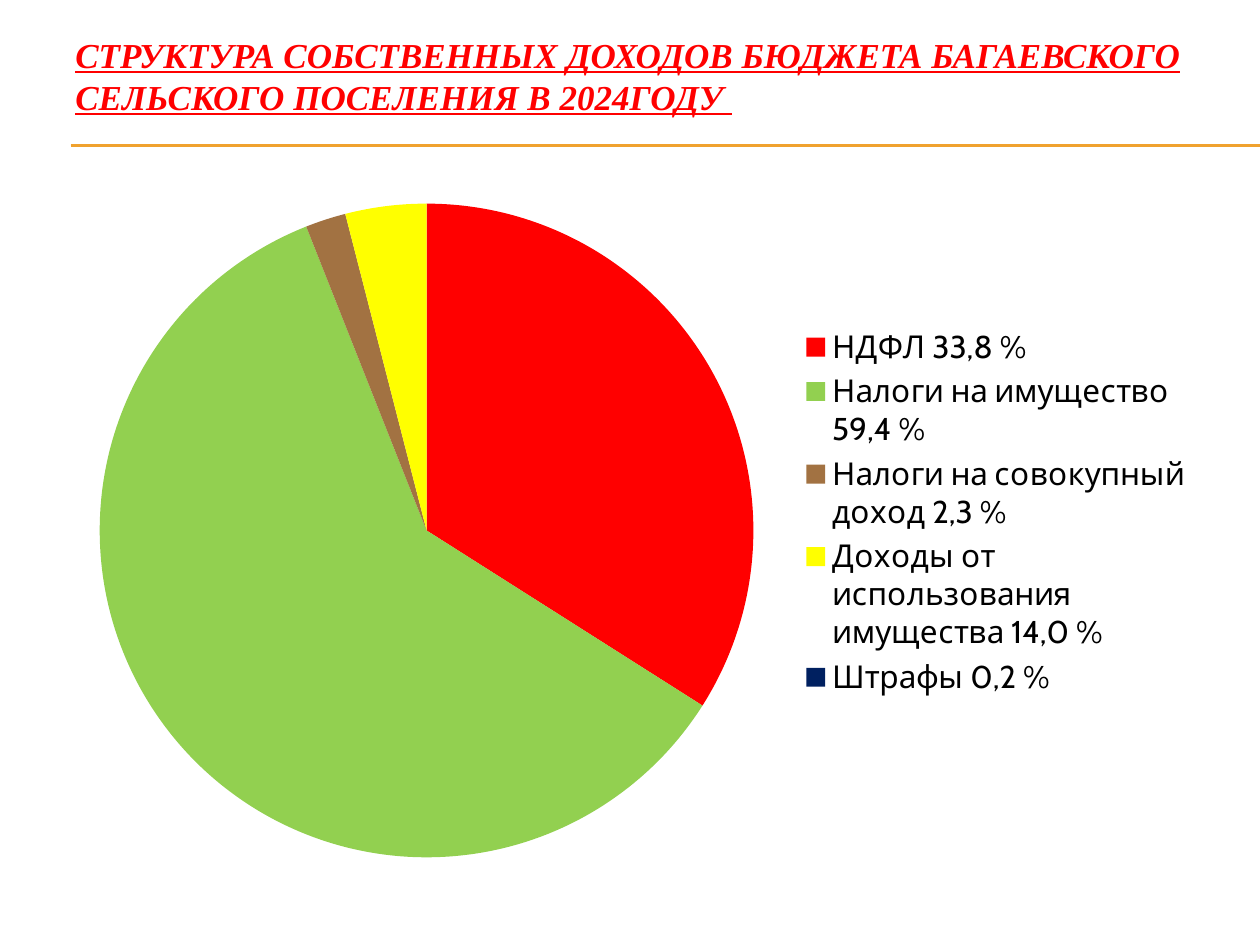
from lxml import etree
from pptx import Presentation
from pptx.chart.data import CategoryChartData
from pptx.dml.color import RGBColor
from pptx.enum.chart import XL_CHART_TYPE, XL_LEGEND_POSITION
from pptx.enum.shapes import MSO_CONNECTOR
from pptx.enum.text import MSO_ANCHOR
from pptx.oxml import parse_xml
from pptx.oxml.ns import nsdecls, qn
from pptx.util import Inches, Pt

PIE = XL_CHART_TYPE.PIE
LEGEND_RIGHT = XL_LEGEND_POSITION.RIGHT
STRAIGHT = MSO_CONNECTOR.STRAIGHT
MIDDLE = MSO_ANCHOR.MIDDLE

RED = RGBColor(0xFF, 0x00, 0x00)
GREEN = RGBColor(0x92, 0xD0, 0x50)
BROWN = RGBColor(0xA2, 0x72, 0x42)
YELLOW = RGBColor(0xFF, 0xFF, 0x00)
NAVY = RGBColor(0x00, 0x20, 0x60)
ORANGE = RGBColor(0xF0, 0xA2, 0x2E)
BLACK = RGBColor(0x00, 0x00, 0x00)

TITLE = "СТРУКТУРА СОБСТВЕННЫХ ДОХОДОВ БЮДЖЕТА БАГАЕВСКОГО СЕЛЬСКОГО ПОСЕЛЕНИЯ В 2024ГОДУ "
INCOME = [
    ("НДФЛ 33,8 %", 34, RED),
    ("Налоги на имущество 59,4 %", 60, GREEN),
    ("Налоги на совокупный доход 2,3 %", 2, BROWN),
    ("Доходы от использования имущества 14,0 %", 4, YELLOW),
    ("Штрафы 0,2 %", 0, NAVY),
]
RULE_HEIGHTS = (1.15, 1.16)
PLOT_AREA = {"x": 0.02, "y": 0.08, "w": 0.64, "h": 0.89}


def add_rule(page, top):
    rule = page.shapes.add_connector(
        STRAIGHT, Inches(0.56), Inches(top), Inches(10), Inches(top))
    rule.line.color.rgb = ORANGE
    rule.line.width = Pt(0.75)
    etree.SubElement(rule._element.spPr, qn("a:effectLst"))


def add_title(page):
    box = page.shapes.add_textbox(Inches(0.5), Inches(0.13), Inches(9), Inches(0.94))
    frame = box.text_frame
    frame.word_wrap = True
    frame.vertical_anchor = MIDDLE
    span = frame.paragraphs[0].add_run()
    span.text = TITLE
    font = span.font
    font.name = "Times New Roman"
    font.size = Pt(20)
    font.bold = font.italic = font.underline = True
    font.color.rgb = RED


def place_plot(chart):
    """Fix the inner plot area as fractions of the chart frame."""
    plot_area = chart._chartSpace.chart.plotArea
    for old in plot_area.findall(qn("c:layout")):
        plot_area.remove(old)
    sizes = "".join(f'<c:{side} val="{part}"/>' for side, part in PLOT_AREA.items())
    plot_area.insert(0, parse_xml(
        f'<c:layout {nsdecls("c")}><c:manualLayout><c:layoutTarget val="inner"/>'
        f'<c:xMode val="edge"/><c:yMode val="edge"/>{sizes}'
        '</c:manualLayout></c:layout>'))


def add_income_chart(page):
    names, shares, colors = zip(*INCOME)
    data = CategoryChartData()
    data.categories = names
    data.add_series("Series 1", shares)
    chart = page.shapes.add_chart(
        PIE, Inches(0.2), Inches(1.15), Inches(9.37), Inches(5.83), data).chart
    chart.has_title = False
    chart.font.name = "Cabin"
    chart.font.size = Pt(18)
    chart.font.color.rgb = BLACK
    chart.has_legend = True
    chart.legend.position = LEGEND_RIGHT
    chart.legend.include_in_layout = False

    pie = chart.plots[0]
    pie.vary_by_categories = True
    for index, color in enumerate(colors):
        slice_format = pie.series[0].points[index].format
        slice_format.fill.solid()
        slice_format.fill.fore_color.rgb = color
        slice_format.line.fill.background()
    place_plot(chart)


def main():
    deck = Presentation()
    deck.slide_width, deck.slide_height = Inches(10), Inches(7.5)
    page = deck.slides.add_slide(deck.slide_layouts[6])
    for top in RULE_HEIGHTS:
        add_rule(page, top)
    add_title(page)
    add_income_chart(page)
    deck.save("out.pptx")


if __name__ == "__main__":
    main()
